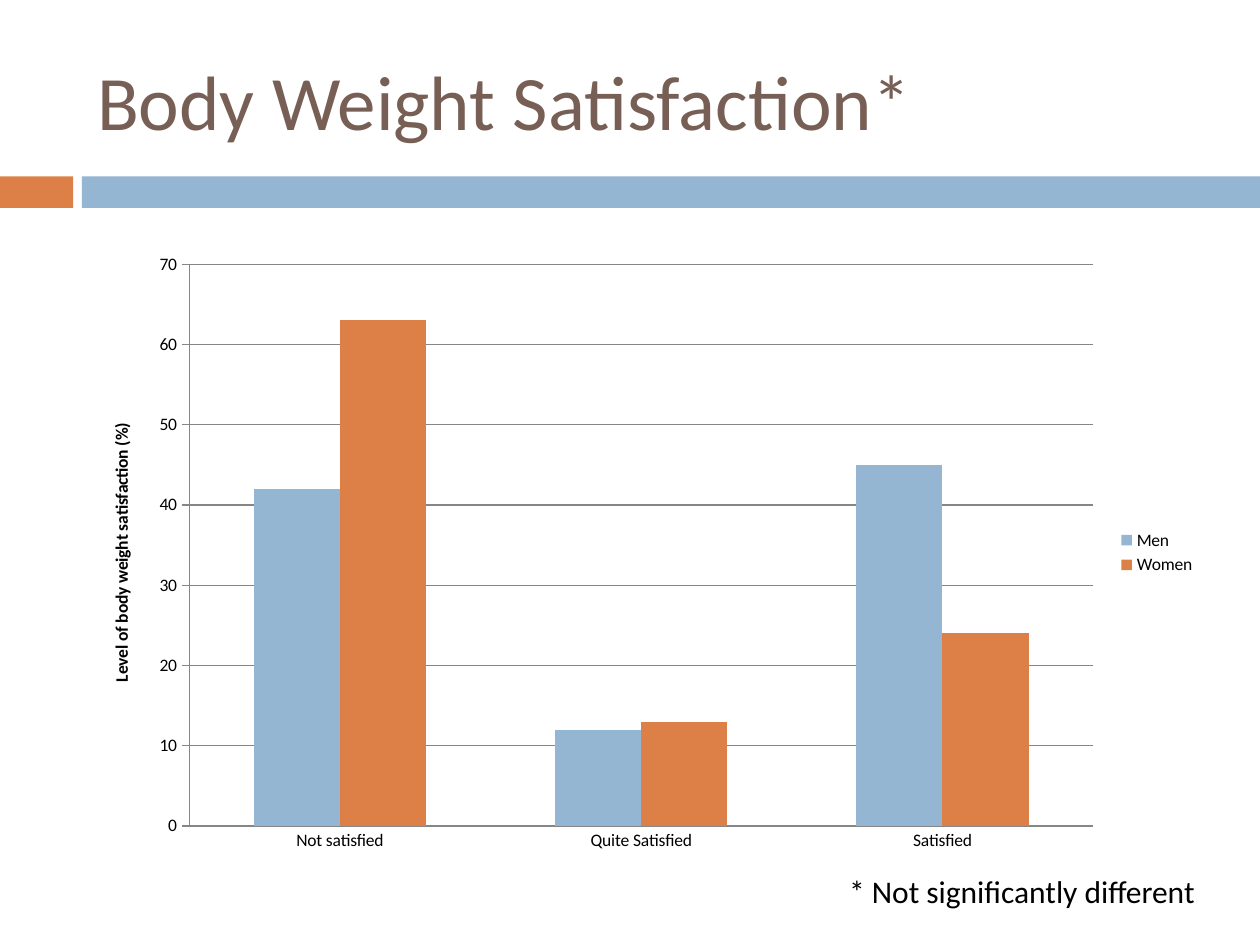
from pptx import Presentation
from pptx.chart import data
from pptx.dml.color import RGBColor
from pptx.enum import chart as ch, shapes, text
from pptx.util import Inches, Pt

FONT = "Calibri"
COLORS = {"blue": "94B6D2", "orange": "DD8047", "brown": "775F55",
          "black": "000000", "gray": "868686"}


def rgb(name):
    return RGBColor.from_string(COLORS[name])


def add_run(para, words, size, color="black", bold=False):
    run = para.add_run()
    run.text = words
    run.font.name = FONT
    run.font.size = Pt(size)
    run.font.bold = bold
    run.font.color.rgb = rgb(color)


prs = Presentation()
prs.slide_width, prs.slide_height = Inches(10), Inches(7.5)
slide = prs.slides.add_slide(prs.slide_layouts[5])

# Bands under the title
for left, width, color in [(0, 0.58, "orange"), (0.65, 9.35, "blue")]:
    band = slide.shapes.add_shape(shapes.MSO_SHAPE.RECTANGLE, Inches(left),
                                  Inches(1.4), Inches(width), Inches(0.25))
    band.shadow.inherit = False
    band.fill.solid()
    band.fill.fore_color.rgb = rgb(color)
    band.line.fill.background()

# Title
title = slide.shapes.title
title.left, title.top = Inches(0.67), Inches(0.25)
title.width, title.height = Inches(8.92), Inches(1.08)
frame = title.text_frame
frame.vertical_anchor = text.MSO_ANCHOR.MIDDLE
frame.paragraphs[0].alignment = text.PP_ALIGN.LEFT
add_run(frame.paragraphs[0], "Body Weight Satisfaction*", 44, "brown")

# Chart
table = data.CategoryChartData()
table.categories = ["Not satisfied", "Quite Satisfied", "Satisfied"]
table.add_series("Men ", (42, 12, 45))
table.add_series("Women", (63, 13, 24))
chart = slide.shapes.add_chart(
    ch.XL_CHART_TYPE.COLUMN_CLUSTERED, Inches(0.67), Inches(1.92),
    Inches(8.92), Inches(4.93), table).chart
chart.has_title = False
chart.font.name = FONT
chart.font.size = Pt(10)
chart.font.color.rgb = rgb("black")

plot = chart.plots[0]
plot.gap_width = 150
plot.overlap = 0
plot.vary_by_categories = False
for series, color in zip(plot.series, ("blue", "orange")):
    series.format.fill.solid()
    series.format.fill.fore_color.rgb = rgb(color)

# Axes and legend
cat, val = chart.category_axis, chart.value_axis
cat.major_tick_mark = ch.XL_TICK_MARK.NONE
val.major_tick_mark = ch.XL_TICK_MARK.OUTSIDE
val.minimum_scale, val.maximum_scale, val.major_unit = 0, 70, 10
val.has_major_gridlines = True
for part in (cat, val, val.major_gridlines):
    part.format.line.color.rgb = rgb("gray")
    part.format.line.width = Pt(0.75)
add_run(val.axis_title.text_frame.paragraphs[0],
        "Level of body weight satisfaction (%)", 10, bold=True)
chart.has_legend = True
chart.legend.position = ch.XL_LEGEND_POSITION.RIGHT
chart.legend.include_in_layout = False

# Footnote
note = slide.shapes.add_textbox(Inches(6.64), Inches(6.87),
                                Inches(2.95), Inches(0.4))
note.text_frame.word_wrap = False
note.text_frame.auto_size = text.MSO_AUTO_SIZE.SHAPE_TO_FIT_TEXT
add_run(note.text_frame.paragraphs[0], "* Not significantly different", 18)

prs.save("out.pptx")
